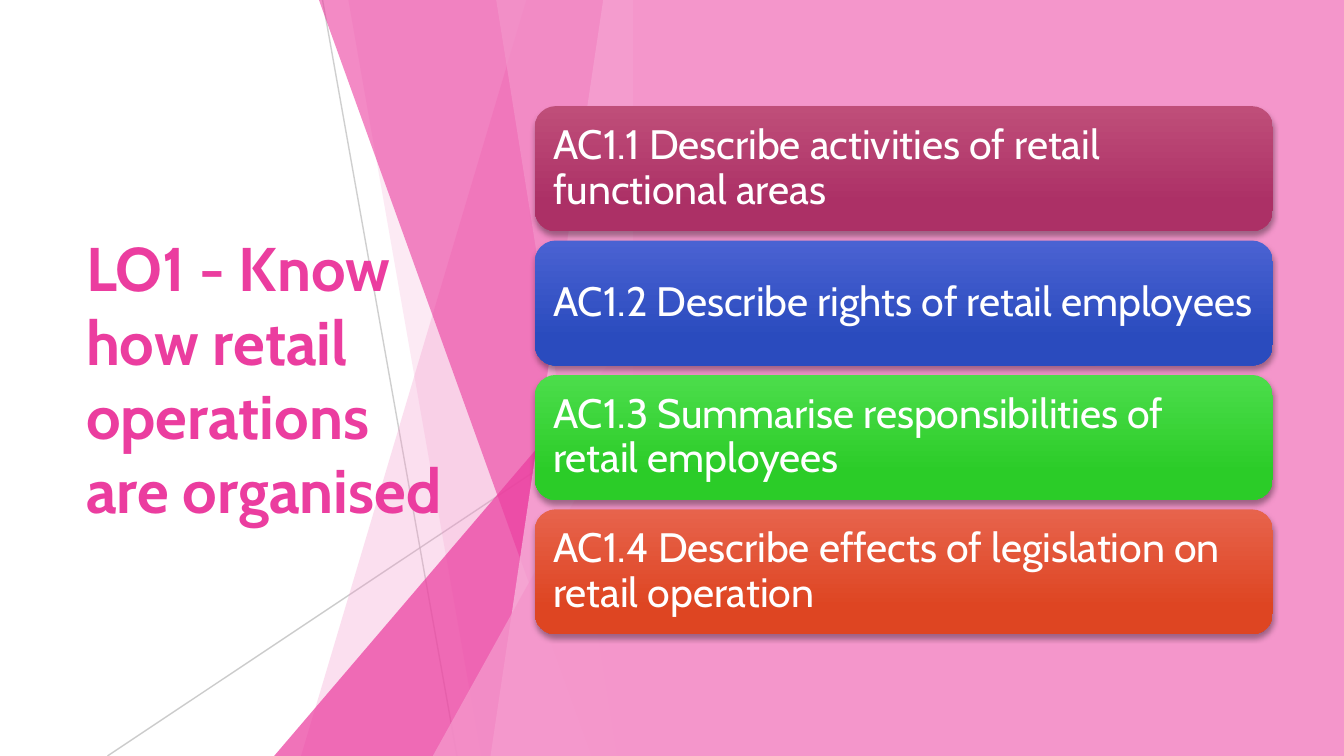
"""Build the retail learning-outcome slide with four assessment criteria."""
import pptx
import pptx.dml.color
import pptx.enum.shapes
import pptx.enum.text
import pptx.oxml.ns
import pptx.util
from lxml import etree
from pptx.util import Inches

qn = pptx.oxml.ns.qn
SHAPES = pptx.enum.shapes.MSO_SHAPE


def paint(color, value, properties=None, alpha=100):
    color.rgb = pptx.dml.color.RGBColor.from_string(value)
    if alpha < 100:
        tint = next(properties.iter(qn("a:srgbClr")))
        etree.SubElement(tint, qn("a:alpha")).set("val", str(alpha * 1000))


def write(frame, text, size, color, bold=False, spacing=1.0, after=0, inset=0.1):
    frame.word_wrap = True
    frame.auto_size = pptx.enum.text.MSO_AUTO_SIZE.NONE
    frame.vertical_anchor = pptx.enum.text.MSO_ANCHOR.MIDDLE
    frame.margin_left = frame.margin_right = Inches(inset)
    frame.margin_top = frame.margin_bottom = Inches(inset / 2)
    paragraph = frame.paragraphs[0]
    paragraph.alignment = pptx.enum.text.PP_ALIGN.LEFT
    paragraph.line_spacing = spacing
    paragraph.space_after = pptx.util.Pt(after)
    run = paragraph.add_run()
    run.text = text
    run.font.name = "Cabin"
    run.font.size = pptx.util.Pt(size)
    run.font.bold = bold
    paint(run.font.color, color)


slide_width = 10
bottom = slide_width * 9 / 16
panel_left = 4.71

deck = pptx.Presentation()
deck.slide_width, deck.slide_height = Inches(slide_width), Inches(bottom)
slide = deck.slides.add_slide(deck.slide_layouts[5])
shapes = slide.shapes

for x1, y1, x2, y2, alpha in [(2.4, 0, 3.4, bottom, 75), (panel_left, 3.02, 0.8, bottom, 80)]:
    ray = shapes.add_connector(
        pptx.enum.shapes.MSO_CONNECTOR.STRAIGHT,
        Inches(x1), Inches(y1), Inches(x2), Inches(y2))
    ray.line.width = pptx.util.Pt(0.75)
    paint(ray.line.color, "BFBFBF", ray.element.spPr, alpha)
    etree.SubElement(ray.element.spPr, qn("a:effectLst"))

facets = [
    ("band", 3.92, 2.24, "F496CB", 30),
    ("band", 2.59, 3.58, "F496CB", 20),
    ("wedge", 2.04, 2.5, "EB3D9F", 72),
    ("band", 2.37, 4.4, "EB3D9F", 60),
    ("band", 4.49, 3.65, "F8C0E0", 70),
    ("band", 3.69, 4.59, "F496CB", 65),
    ("wedge", 3.22, 2.94, "F496CB", 80),
]
for kind, first, second, color, alpha in facets:
    if kind == "band":
        outline = shapes.build_freeform(Inches(first), Inches(-0.01))
        outline.add_line_segments([
            (Inches(x), Inches(y)) for x, y in
            [(panel_left, -0.01), (panel_left, bottom), (second, bottom)]])
        facet = outline.convert_to_shape()
    else:
        facet = shapes.add_shape(
            SHAPES.ISOSCELES_TRIANGLE, Inches(first), Inches(second),
            Inches(panel_left - first), Inches(bottom - second))
        facet.adjustments[0] = 1
    facet.shadow.inherit = False
    facet.line.fill.background()
    facet.fill.solid()
    paint(facet.fill.fore_color, color, facet.element.spPr, alpha)

title = shapes.title
title.left, title.top = Inches(0.54), Inches(1.13)
title.width, title.height = Inches(2.91), Inches(3.36)
write(title.text_frame, "LO1 - Know how retail operations are organised",
      size=33, color="EB3D9F", bold=True, after=6)
title.element.getparent().append(title.element)

panel = shapes.add_shape(SHAPES.RECTANGLE, Inches(panel_left), 0,
                         Inches(slide_width - panel_left), Inches(bottom))
panel.shadow.inherit = False
panel.line.fill.background()
panel.fill.solid()
paint(panel.fill.fore_color, "F496CB")

criteria = [
    ("AC1.1 Describe activities of retail functional areas", "BF4E79", "AC3066"),
    ("AC1.2 Describe rights of retail employees", "4A62D2", "2A4BBE"),
    ("AC1.3 Summarise responsibilities of retail employees", "4CDD4B", "2BCC28"),
    ("AC1.4 Describe effects of legislation on retail operation", "E7634C", "DE4522"),
]
for row, (criterion, top_color, base_color) in enumerate(criteria):
    card = shapes.add_shape(SHAPES.ROUNDED_RECTANGLE, Inches(3.98),
                            Inches(0.79 + row), Inches(5.49), Inches(0.93))
    card.line.fill.background()
    card.fill.gradient()
    card.fill.gradient_angle = 270
    for stop, color, position in zip(card.fill.gradient_stops, (top_color, base_color), (0, 0.78)):
        paint(stop.color, color)
        stop.position = position
    card.shadow.inherit = False
    effects = card.element.spPr.find(qn("a:effectLst"))
    shadow = etree.SubElement(effects, qn("a:outerShdw"), blurRad=str(pptx.util.Pt(3)),
                              dist=str(pptx.util.Pt(2)), dir="5400000", rotWithShape="0")
    black = etree.SubElement(shadow, qn("a:srgbClr"), val="000000")
    etree.SubElement(black, qn("a:alpha"), val="35000")
    write(card.text_frame, criterion, size=22, color="FFFFFF", spacing=0.9, inset=0.09)

deck.save("out.pptx")
